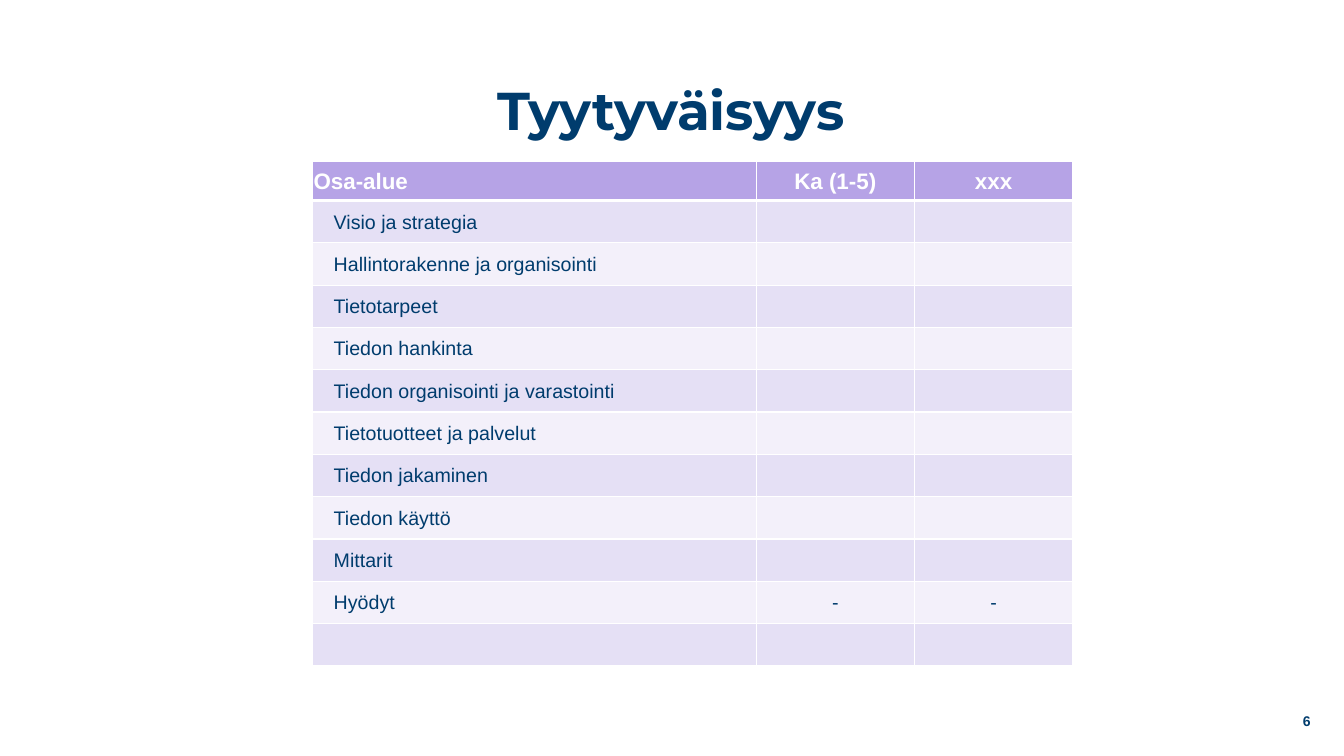
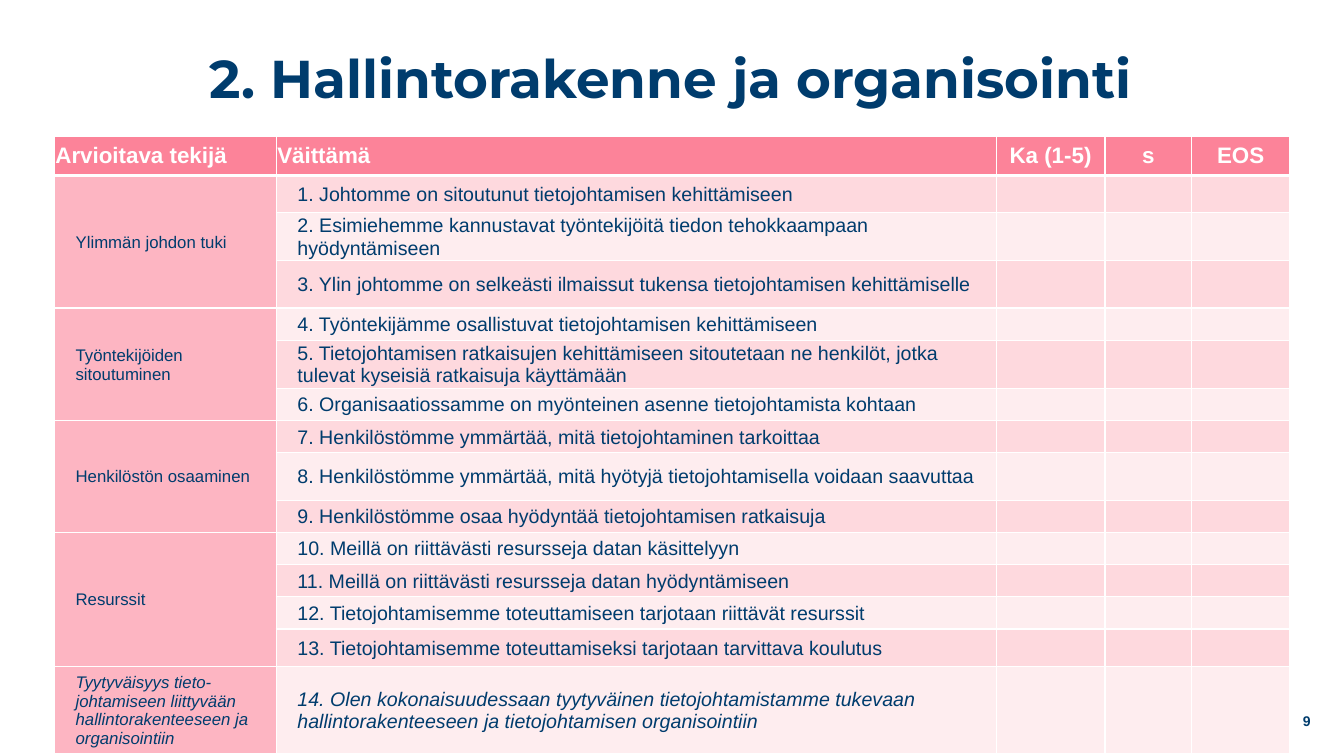
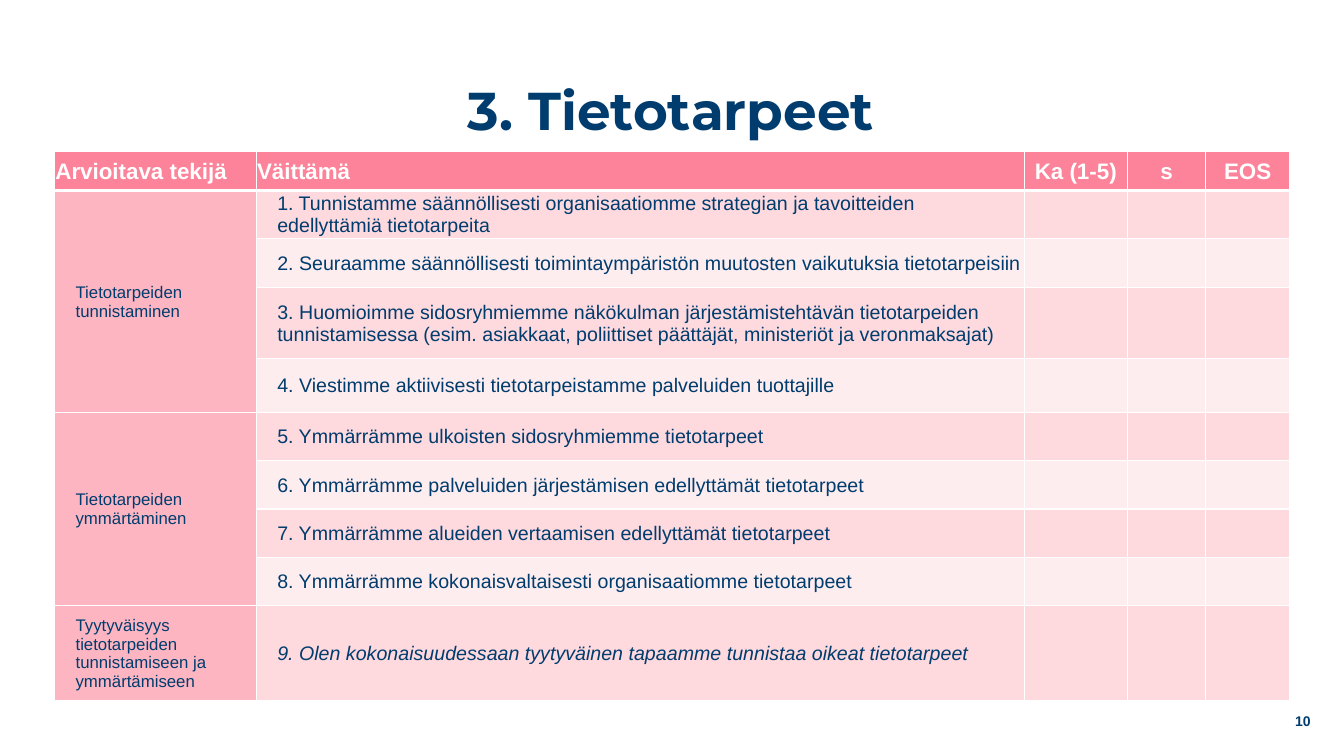
"""Build three slides of satisfaction and knowledge management assessment tables."""
from dataclasses import dataclass

from lxml.etree import SubElement
from pptx import Presentation
from pptx.dml.color import RGBColor
from pptx.enum.text import MSO_ANCHOR, PP_ALIGN
from pptx.oxml.ns import qn
from pptx.util import Inches, Pt


@dataclass(frozen=True)
class Theme:
    navy: str = "003C6D"
    white: str = "FFFFFF"
    title_font: str = "Montserrat"
    body_font: str = "Arial"
    title_size: int = 38
    header_size: int = 16
    body_size: int = 14
    label_size: int = 12
    number_size: int = 10
    grid_line: int = 1
    header_line: int = 3


@dataclass(frozen=True)
class Palette:
    header: str
    label: str
    bands: tuple


THEME = Theme()
PURPLE = Palette("B6A3E6", "E5E0F5", ("E5E0F5", "F3F0FA"))
PINK = Palette("FC8399", "FDB5C2", ("FED9DE", "FEEDEF"))
CLAIM_HEADER = ["Arvioitava tekijä", "Väittämä", "Ka (1-5)", "s", "EOS"]

AREAS = [
    "Visio ja strategia",
    "Hallintorakenne ja organisointi",
    "Tietotarpeet",
    "Tiedon hankinta",
    "Tiedon organisointi ja varastointi",
    "Tietotuotteet ja palvelut",
    "Tiedon jakaminen",
    "Tiedon käyttö",
    "Mittarit",
    "Hyödyt",
    "",
]

GOVERNANCE = [
    ("Ylimmän johdon tuki", [
        "1. Johtomme on sitoutunut tietojohtamisen kehittämiseen",
        "2. Esimiehemme kannustavat työntekijöitä tiedon tehokkaampaan hyödyntämiseen",
        "3. Ylin johtomme on selkeästi ilmaissut tukensa tietojohtamisen kehittämiselle",
    ]),
    ("Työntekijöiden sitoutuminen", [
        "4. Työntekijämme osallistuvat tietojohtamisen kehittämiseen",
        "5. Tietojohtamisen ratkaisujen kehittämiseen sitoutetaan ne henkilöt, jotka "
        "tulevat kyseisiä ratkaisuja käyttämään",
        "6. Organisaatiossamme on myönteinen asenne tietojohtamista kohtaan",
    ]),
    ("Henkilöstön osaaminen", [
        "7. Henkilöstömme ymmärtää, mitä tietojohtaminen tarkoittaa",
        "8. Henkilöstömme ymmärtää, mitä hyötyjä tietojohtamisella voidaan saavuttaa",
        "9. Henkilöstömme osaa hyödyntää tietojohtamisen ratkaisuja",
    ]),
    ("Resurssit", [
        "10. Meillä on riittävästi resursseja datan käsittelyyn",
        "11. Meillä on riittävästi resursseja datan hyödyntämiseen",
        "12. Tietojohtamisemme toteuttamiseen tarjotaan riittävät resurssit",
        "13. Tietojohtamisemme toteuttamiseksi tarjotaan tarvittava koulutus",
    ]),
    ("Tyytyväisyys tieto-johtamiseen liittyvään hallintorakenteeseen ja organisointiin", [
        "14. Olen kokonaisuudessaan tyytyväinen tietojohtamistamme tukevaan "
        "hallintorakenteeseen ja tietojohtamisen organisointiin",
    ]),
]

NEEDS = [
    ("Tietotarpeiden tunnistaminen", [
        "1. Tunnistamme säännöllisesti organisaatiomme strategian ja tavoitteiden "
        "edellyttämiä tietotarpeita",
        "2. Seuraamme säännöllisesti toimintaympäristön muutosten vaikutuksia tietotarpeisiin",
        "3. Huomioimme sidosryhmiemme näkökulman järjestämistehtävän tietotarpeiden "
        "tunnistamisessa (esim. asiakkaat, poliittiset päättäjät, ministeriöt ja veronmaksajat)",
        "4. Viestimme aktiivisesti tietotarpeistamme palveluiden tuottajille",
    ]),
    ("Tietotarpeiden ymmärtäminen", [
        "5. Ymmärrämme ulkoisten sidosryhmiemme tietotarpeet",
        "6. Ymmärrämme palveluiden järjestämisen edellyttämät tietotarpeet",
        "7. Ymmärrämme alueiden vertaamisen edellyttämät tietotarpeet",
        "8. Ymmärrämme kokonaisvaltaisesti organisaatiomme tietotarpeet",
    ]),
    ("Tyytyväisyys\ntietotarpeiden\ntunnistamiseen ja\nymmärtämiseen", [
        "9. Olen kokonaisuudessaan tyytyväinen tapaamme tunnistaa oikeat tietotarpeet",
    ]),
]


def area_rows(areas):
    return [[area] + ["-" if area == "Hyödyt" else ""] * 2 for area in areas]


def claim_rows(groups):
    return [["" if i else label, claim, "", "", ""]
            for label, claims in groups for i, claim in enumerate(claims)]


SLIDES = [
    dict(title="Tyytyväisyys", title_top=0.4, number=6, palette=PURPLE,
         left=3.1, top=1.6, cols=[4.4, 1.57, 1.57], heights=[0.39] + [0.42] * 11,
         header=["Osa-alue", "Ka (1-5)", "xxx"], rows=area_rows(AREAS),
         groups=[], text_cols=1, italics=()),
    dict(title="2. Hallintorakenne ja organisointi", title_top=0.08, number=9, palette=PINK,
         left=0.54, top=1.35, cols=[2.2, 7.14, 1.08, 0.86, 0.97],
         heights=[0.39, 0.37, 0.47, 0.47, 0.32, 0.47, 0.32, 0.32, 0.47]
         + [0.32] * 4 + [0.37, 0.87],
         header=CLAIM_HEADER, rows=claim_rows(GOVERNANCE),
         groups=GOVERNANCE, text_cols=2, italics=((14, 0), (14, 1))),
    dict(title="3. Tietotarpeet", title_top=0.4, number=10, palette=PINK,
         left=0.54, top=1.5, cols=[2, 7.62, 1.02, 0.78, 0.83],
         heights=[0.39, 0.48, 0.48, 0.71, 0.53] + [0.48] * 4 + [0.94],
         header=CLAIM_HEADER, rows=claim_rows(NEEDS),
         groups=NEEDS, text_cols=2, italics=((9, 1),)),
]


def style(p, size, color, font=THEME.body_font, bold=False, italic=False, align=PP_ALIGN.LEFT):
    p.alignment = align
    p.font.name, p.font.size = font, Pt(size)
    p.font.bold, p.font.italic = bold, italic
    p.font.color.rgb = RGBColor.from_string(color)


def add_text(s, box, text, margins, **look):
    tf = s.shapes.add_textbox(*map(Inches, box)).text_frame
    tf.word_wrap = True
    tf.vertical_anchor = MSO_ANCHOR.MIDDLE
    tf.margin_left, tf.margin_top, tf.margin_right, tf.margin_bottom = map(Inches, margins)
    p = tf.paragraphs[0]
    p.text = text
    style(p, **look)
    return p


def set_borders(cell, row):
    tcPr = cell._tc.get_or_add_tcPr()
    heavy = {0: "B", 1: "T"}.get(row)
    for side in "LRTB":
        width = THEME.header_line if side == heavy else THEME.grid_line
        ln = SubElement(tcPr, qn(f"a:ln{side}"), w=str(Pt(width)))
        SubElement(SubElement(ln, qn("a:solidFill")), qn("a:srgbClr"), val=THEME.white)


def fill_cell(cell, row, col, text, spec):
    palette, is_text = spec["palette"], col < spec["text_cols"]
    is_label = row > 0 and col == 0 and bool(spec["groups"])
    if row == 0:
        fill, size, color = palette.header, THEME.header_size, THEME.white
    else:
        fill = palette.label if is_label else palette.bands[(row - 1) % 2]
        size = THEME.label_size if is_label else THEME.body_size
        color = THEME.navy
    set_borders(cell, row)
    cell.fill.solid()
    cell.fill.fore_color.rgb = RGBColor.from_string(fill)
    cell.vertical_anchor = MSO_ANCHOR.MIDDLE
    cell.margin_left = cell.margin_right = cell.margin_top = Inches(0.01)
    cell.margin_bottom = 0
    cell.text = text
    for p in cell.text_frame.paragraphs:
        if row and is_text:
            p._p.get_or_add_pPr().set("marL", str(Inches(0.2)))
        style(p, size, color, bold=row == 0, italic=(row, col) in spec["italics"],
              align=PP_ALIGN.LEFT if is_text else PP_ALIGN.CENTER)
        if not text:
            SubElement(p._p, qn("a:endParaRPr"), sz=str(size * 100))


def add_grid(s, spec):
    rows = [spec["header"]] + spec["rows"]
    cols, heights = spec["cols"], spec["heights"]
    box = (spec["left"], spec["top"], sum(cols), sum(heights))
    table = s.shapes.add_table(len(rows), len(cols), *map(Inches, box)).table
    table.horz_banding = False
    for column, width in zip(table.columns, cols):
        column.width = Inches(width)
    for row, height in zip(table.rows, heights):
        row.height = Inches(height)
    for r, texts in enumerate(rows):
        for c, text in enumerate(texts):
            fill_cell(table.cell(r, c), r, c, text, spec)
    first = 1
    for label, claims in spec["groups"]:
        last = first + len(claims) - 1
        if last > first:
            table.cell(first, 0).merge(table.cell(last, 0))
        first = last + 1


def add_slide(prs, spec):
    s = prs.slides.add_slide(prs.slide_layouts[6])
    title = add_text(s, (0.97, spec["title_top"], 11.37, 1.45), spec["title"],
                     (0.1, 0.05, 0.1, 0.05), size=THEME.title_size, color=THEME.navy,
                     font=THEME.title_font, bold=True, align=PP_ALIGN.CENTER)
    title.line_spacing = 0.9
    add_grid(s, spec)
    add_text(s, (12.37, 6.95, 0.63, 0.4), str(spec["number"]), (0.1, 0.05, 0, 0.05),
             size=THEME.number_size, color=THEME.navy, bold=True, align=PP_ALIGN.RIGHT)


def main():
    prs = Presentation()
    prs.slide_width, prs.slide_height = Inches(13.33), Inches(7.5)
    for spec in SLIDES:
        add_slide(prs, spec)
    prs.save("out.pptx")


if __name__ == "__main__":
    main()
